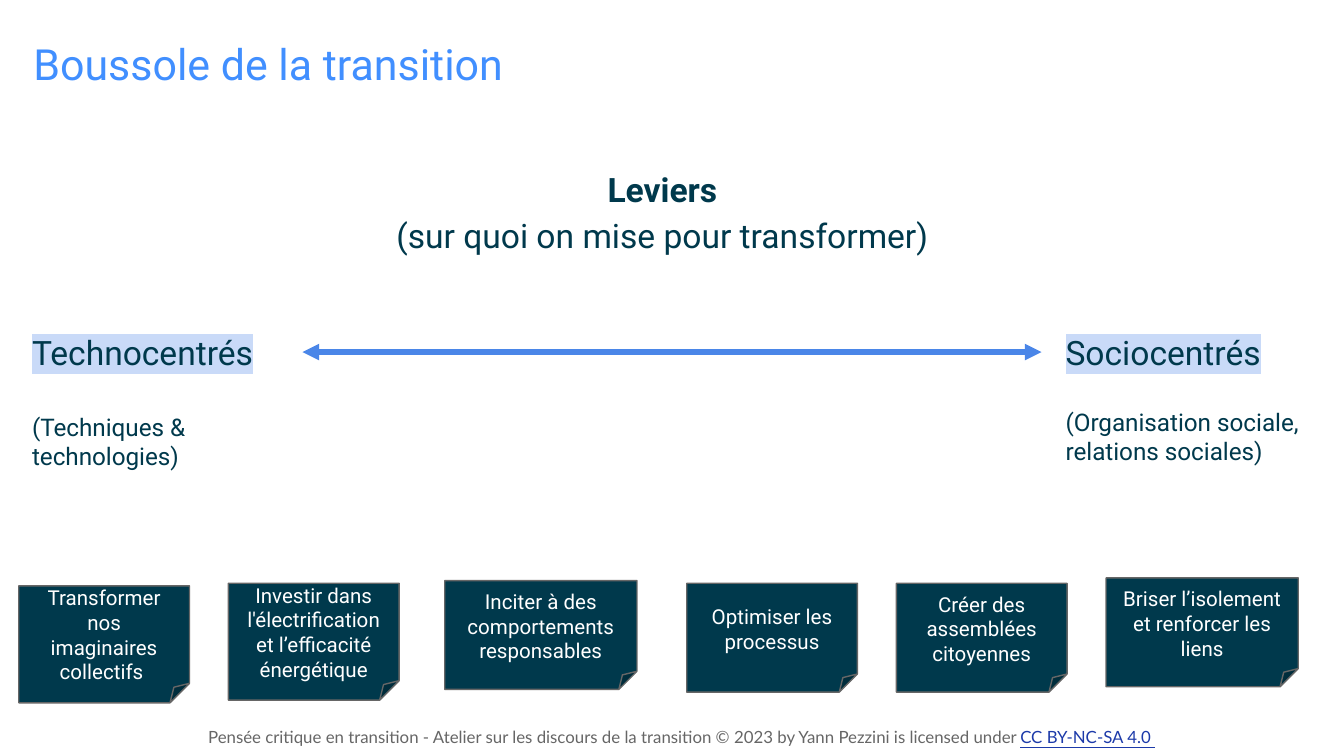
import pptx
import pptx.dml.color
import pptx.enum.shapes
import pptx.enum.text
import pptx.oxml
import pptx.oxml.ns
import pptx.util
from pptx.util import Inches

RGBColor = pptx.dml.color.RGBColor
NAVY = RGBColor(0x00, 0x39, 0x4C)
TITLE_BLUE = RGBColor(0x41, 0x8F, 0xFF)
ARROW_BLUE = RGBColor(0x4A, 0x86, 0xE8)
LINK_BLUE = RGBColor(0x1C, 0x3A, 0xA9)
HIGHLIGHT = RGBColor(0xC9, 0xDA, 0xF8)
GREY = RGBColor(0x66, 0x66, 0x66)
WHITE = RGBColor(0xFF, 0xFF, 0xFF)
CENTER = pptx.enum.text.PP_ALIGN.CENTER
LEFT = pptx.enum.text.PP_ALIGN.LEFT
DRAWING = pptx.oxml.ns.nsdecls("a")


def prepare_frame(shape, anchor=pptx.enum.text.MSO_ANCHOR.TOP):
    """Wrap the shape's text inside equal margins and return its frame."""
    frame = shape.text_frame
    frame.word_wrap = True
    frame.vertical_anchor = anchor
    frame.margin_left = frame.margin_right = Inches(0.1)
    frame.margin_top = frame.margin_bottom = Inches(0.1)
    return frame


def write(paragraph, text, size, color=NAVY, font="Roboto", bold=False,
          underline=False, highlight=None, align=LEFT, spacing=None, before=0):
    """Append a run to the paragraph and set the paragraph's layout."""
    paragraph.alignment = align
    paragraph.space_before = pptx.util.Pt(before)
    if spacing:
        paragraph.line_spacing = spacing
    run = paragraph.add_run()
    run.text = text
    run.font.name = font
    run.font.size = pptx.util.Pt(size)
    run.font.bold = bold
    run.font.underline = underline
    run.font.color.rgb = color
    if highlight:
        fill = run.font._element.find(pptx.oxml.ns.qn("a:solidFill"))
        fill.addnext(pptx.oxml.parse_xml(
            f'<a:highlight {DRAWING}><a:srgbClr val="{highlight}"/></a:highlight>'))


presentation = pptx.Presentation()
presentation.slide_width = Inches(10)
presentation.slide_height = presentation.slide_width * 9 // 16
slide = presentation.slides.add_slide(presentation.slide_layouts[6])
shapes = slide.shapes

# Licence line
footer = prepare_frame(shapes.add_textbox(Inches(1.45), Inches(5.33), Inches(7.65), Inches(0.61)))
licence = footer.paragraphs[0]
write(licence, "Pensée critique en transition - Atelier sur les discours de la transition "
      "© 2023 by Yann Pezzini is licensed under ", 9, GREY, "Lato")
write(licence, "CC BY-NC-SA 4.0 ", 9, LINK_BLUE, "Lato", underline=True)

# Notes: left, top, width, height, text
notes = [
    (0.14, 4.36, 1.27, 0.87, "Transformer nos imaginaires collectifs "),
    (3.31, 4.32, 1.43, 0.81, "Inciter à des comportements responsables"),
    (5.11, 4.34, 1.27, 0.81, "Optimiser les processus"),
    (1.7, 4.34, 1.27, 0.87, "Investir dans l'électrification et l’efficacité énergétique"),
    (6.67, 4.34, 1.27, 0.81, "Créer des assemblées citoyennes"),
    (8.23, 4.3, 1.43, 0.81, "Briser l’isolement et renforcer les liens"),
]
for left, top, width, height, text in notes:
    note = shapes.add_shape(pptx.enum.shapes.MSO_SHAPE.FOLDED_CORNER,
                            Inches(left), Inches(top), Inches(width), Inches(height))
    note.shadow.inherit = False
    note.fill.solid()
    note.fill.fore_color.rgb = NAVY
    note.line.color.rgb = GREY
    note.line.width = pptx.util.Pt(0.75)
    frame = prepare_frame(note, pptx.enum.text.MSO_ANCHOR.MIDDLE)
    write(frame.paragraphs[0], text, 11, WHITE, align=CENTER)

# Axis between the two poles
axis = shapes.add_connector(pptx.enum.shapes.MSO_CONNECTOR.STRAIGHT,
                            Inches(2.25), Inches(2.62), Inches(7.75), Inches(2.62))
axis.line.color.rgb = ARROW_BLUE
axis.line.width = pptx.util.Pt(3)
axis_line = axis.line._get_or_add_ln()
for end in ("headEnd", "tailEnd"):
    axis_line.append(pptx.oxml.parse_xml(f'<a:{end} {DRAWING} type="triangle"/>'))
axis_line.addnext(pptx.oxml.parse_xml(f"<a:effectLst {DRAWING}/>"))

# Poles: left, width, height, name, detail, gap between them in points
poles = [
    (7.83, 2.11, 1.21, "Sociocentrés", "(Organisation sociale, relations sociales)", 18.75),
    (0.14, 2.03, 1.25, "Technocentrés", "(Techniques & technologies)", 21.25),
]
for left, width, height, name, detail, gap in poles:
    pole = prepare_frame(shapes.add_textbox(Inches(left), Inches(2.37), Inches(width), Inches(height)))
    write(pole.paragraphs[0], name, 18, highlight=HIGHLIGHT)
    write(pole.add_paragraph(), detail, 13, before=gap)

# Heading above the axis
heading = prepare_frame(shapes.add_textbox(Inches(2.44), Inches(1.11), Inches(5.04), Inches(1.25)))
write(heading.paragraphs[0], "Leviers ", 18, bold=True, align=CENTER, spacing=1.15)
write(heading.add_paragraph(), "(sur quoi on mise pour transformer) ", 18, align=CENTER, spacing=1.15)

# Title
title = prepare_frame(shapes.add_textbox(Inches(0.15), Inches(0.18), Inches(4.14), Inches(1.33)))
write(title.paragraphs[0], "Boussole de la transition", 23, TITLE_BLUE)

presentation.save("out.pptx")
